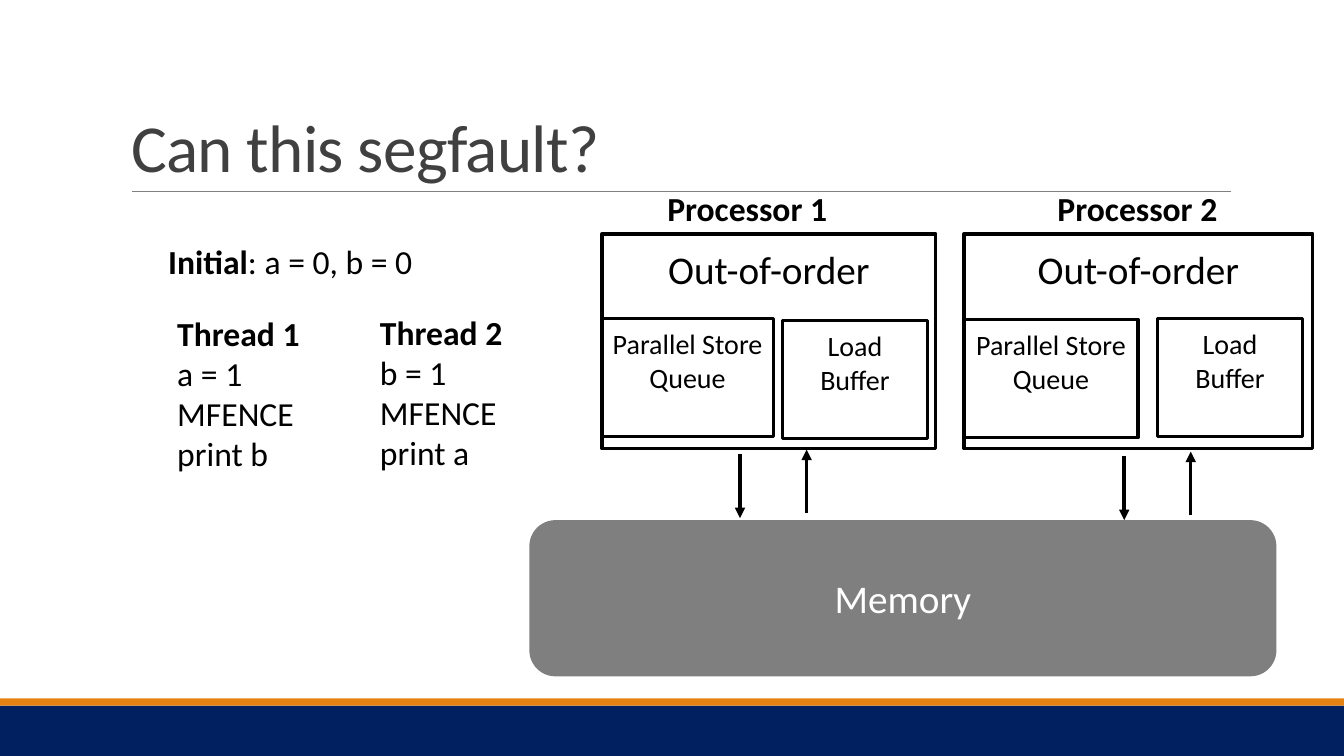
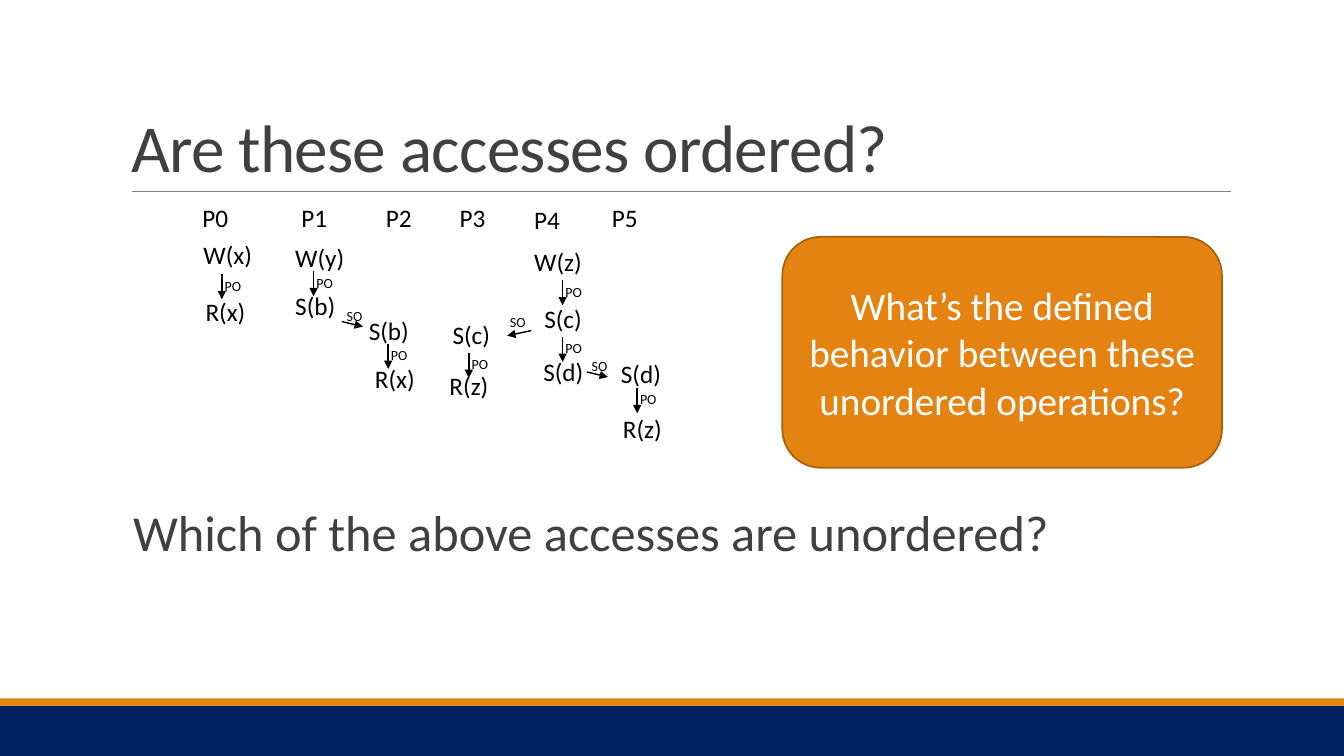
from dataclasses import dataclass

from lxml.etree import SubElement
from pptx import Presentation
from pptx.dml.color import RGBColor
from pptx.enum.shapes import MSO_CONNECTOR, MSO_SHAPE
from pptx.enum.text import MSO_ANCHOR, MSO_AUTO_SIZE, PP_ALIGN
from pptx.oxml.ns import qn
from pptx.util import Inches, Pt

FONT = "Calibri"
COLORS = {
    "navy": "002060",
    "orange": "E48312",
    "rust": "A9610D",
    "rule": "808080",
    "title": "404040",
    "black": "000000",
    "white": "FFFFFF",
}


@dataclass
class Processor:
    name: str
    name_left: float
    left: float
    width: float
    store_top: float
    store_width: float
    load_left: float
    load_top: float
    down_left: float
    up_left: float
    arrow_top: float


@dataclass
class Label:
    text: str
    left: float
    top: float


@dataclass
class SyncEdge:
    start: tuple[float, float]
    end: tuple[float, float]
    label: Label


PROCESSORS = [
    Processor("Processor 1", 6.52, 5.97, 3.31, 3.16, 1.7, 7.76, 3.18, 7.34, 8, 4.5),
    Processor("Processor 2", 10.39, 9.56, 3.46, 3.17, 1.73, 11.48, 3.16, 11.15, 11.81, 4.52),
]

ACCESSES = [
    Label("P0", 1.91, 1.96), Label("W(x)", 1.92, 2.33), Label("R(x)", 1.94, 2.89),
    Label("P1", 2.89, 1.96), Label("W(y)", 2.83, 2.35), Label("S(b)", 2.83, 2.83),
    Label("P2", 3.73, 1.96), Label("S(b)", 3.56, 3.08), Label("R(x)", 3.62, 3.56),
    Label("P3", 4.46, 1.96), Label("S(c)", 4.39, 3.12), Label("R(z)", 4.36, 3.62),
    Label("P4", 5.2, 1.98), Label("W(z)", 5.2, 2.39), Label("S(c)", 5.3, 2.96),
    Label("S(d)", 5.29, 3.49),
    Label("P5", 5.97, 1.96), Label("S(d)", 6.06, 3.51), Label("R(z)", 6.08, 4.05),
]

# Tops of the program-order arrows
PROGRAM_ORDER = [(2.2, 2.72), (3.11, 2.69), (3.85, 3.41), (4.65, 3.5),
                 (5.58, 2.78), (5.58, 3.34), (6.32, 3.85)]

SYNC_ORDER = [
    SyncEdge((3.39, 3.19), (3.6, 3.24), Label("SO", 3.34, 3)),
    SyncEdge((5.27, 3.28), (5.03, 3.33), Label("SO", 4.96, 3.06)),
    SyncEdge((5.82, 3.69), (6.03, 3.74), Label("SO", 5.77, 3.5)),
]


def rgb(color: str) -> RGBColor:
    return RGBColor.from_string(COLORS[color])


def set_font(font, size: float, color: str) -> None:
    font.name = FONT
    font.size = Pt(size)
    font.color.rgb = rgb(color)


def add_text(page, left: float, top: float, width: float, height: float,
             lines: list[str], size: float, color: str = "black",
             bold_first: bool = False):
    box = page.shapes.add_textbox(Inches(left), Inches(top), Inches(width), Inches(height))
    frame = box.text_frame
    frame.word_wrap = True
    frame.text = "\n".join(lines)
    for para in frame.paragraphs:
        set_font(para.font, size, color)
    if bold_first:
        frame.paragraphs[0].font.bold = True
    return box


def add_box(page, kind, left: float, top: float, width: float, height: float,
            fill: str, line: str | None = None, line_width: float = 2.5,
            text: str = "", size: float = 28, color: str = "black",
            top_inset: float | None = None):
    """Draw a filled shape; a top inset places its text at the top."""
    box = page.shapes.add_shape(kind, Inches(left), Inches(top), Inches(width), Inches(height))
    box.shadow.inherit = False
    box.fill.solid()
    box.fill.fore_color.rgb = rgb(fill)
    if line:
        box.line.color.rgb = rgb(line)
        box.line.width = Pt(line_width)
    else:
        box.line.fill.background()
    if text:
        frame = box.text_frame
        frame.word_wrap = True
        frame.vertical_anchor = MSO_ANCHOR.MIDDLE
        if top_inset is not None:
            frame.vertical_anchor = MSO_ANCHOR.TOP
            frame.margin_top = Inches(top_inset)
        frame.text = text
        para = frame.paragraphs[0]
        para.alignment = PP_ALIGN.CENTER
        set_font(para.font, size, color)
    return box


def add_line(page, start: tuple[float, float], end: tuple[float, float],
             width: float, color: str = "black", arrow: bool = True) -> None:
    line = page.shapes.add_connector(
        MSO_CONNECTOR.STRAIGHT, *(Inches(value) for value in (*start, *end)))
    line.line.color.rgb = rgb(color)
    line.line.width = Pt(width)
    if arrow:
        SubElement(line.line._get_or_add_ln(), qn("a:tailEnd"), type="triangle")
    SubElement(line._element.spPr, qn("a:effectLst"))


def add_page(deck, title: str):
    """Add a page with the shared bands, rule and title."""
    page = deck.slides.add_slide(deck.slide_layouts[5])
    add_box(page, MSO_SHAPE.RECTANGLE, 0, 7, 13.33, 0.5, "navy")
    add_box(page, MSO_SHAPE.RECTANGLE, 0, 6.93, 13.33, 0.07, "orange")
    add_line(page, (1.31, 1.9), (12.21, 1.9), 0.5, "rule", arrow=False)

    holder = page.shapes.title
    holder.left, holder.top = Inches(1.2), Inches(0.31)
    holder.width, holder.height = Inches(11), Inches(1.59)
    frame = holder.text_frame
    frame.text = title
    frame.word_wrap = True
    frame.auto_size = MSO_AUTO_SIZE.NONE
    frame.vertical_anchor = MSO_ANCHOR.BOTTOM
    para = frame.paragraphs[0]
    para.alignment = PP_ALIGN.LEFT
    para.line_spacing = 0.85
    set_font(para.font, 48, "title")
    para.runs[0].font._element.set("spc", "-50")
    return page


def draw_processor(page, processor: Processor) -> None:
    add_text(page, processor.name_left, 1.82, 2.36, 0.5, [processor.name], 24, bold_first=True)
    add_box(page, MSO_SHAPE.RECTANGLE, processor.left, 2.32, processor.width, 2.13,
            "white", "black", text="Out-of-order", top_inset=0.11)
    queues = [
        ("Parallel Store Queue", processor.left, processor.store_top, processor.store_width),
        ("Load Buffer", processor.load_left, processor.load_top, 1.44),
    ]
    for text, left, top, width in queues:
        add_box(page, MSO_SHAPE.RECTANGLE, left, top, width, 1.17,
                "white", "black", text=text, size=20, top_inset=0.08)
    # Traffic to and from memory
    top = processor.arrow_top
    add_line(page, (processor.down_left, top), (processor.down_left, top + 0.64), 2.5)
    add_line(page, (processor.up_left, top + 0.59), (processor.up_left, top - 0.04), 2.5)


def build_segfault_page(deck) -> None:
    page = add_page(deck, "Can this segfault?")

    # Memory, half transparent
    memory = add_box(page, MSO_SHAPE.ROUNDED_RECTANGLE, 5.25, 5.16, 7.41, 1.55,
                     "black", text="Memory", color="white")
    fill_color = memory._element.spPr.find(qn("a:solidFill"))[0]
    SubElement(fill_color, qn("a:alpha"), val="50000")

    for processor in PROCESSORS:
        draw_processor(page, processor)

    # Program
    add_text(page, 1.66, 3.05, 2.36, 1.72,
             ["Thread 1", "a = 1", "MFENCE", "print b"], 24, bold_first=True)
    add_text(page, 3.67, 3.04, 2.01, 1.72,
             ["Thread 2", "b = 1", "MFENCE", "print a"], 24, bold_first=True)
    initial = add_text(page, 1.57, 2.34, 4.8, 0.5, ["Initial"], 24)
    para = initial.text_frame.paragraphs[0]
    para.runs[0].font.bold = True
    para.add_run().text = ": a = 0, b = 0"


def build_ordering_page(deck) -> None:
    page = add_page(deck, "Are these accesses ordered?")

    # Question
    question = add_text(page, 1.32, 4.99, 10.88, 1.8,
                        ["Which of the above accesses are unordered?"], 36, "title")
    question.text_frame.margin_left = question.text_frame.margin_right = 0
    question.text_frame.paragraphs[0].line_spacing = 0.9

    # Accesses and the edges between them
    for access in ACCESSES:
        add_text(page, access.left, access.top, 0.73, 0.4, [access.text], 18)
    program_edges = [
        SyncEdge((left, top), (left, top + 0.25), Label("PO", left - 0.07, top - 0.02))
        for left, top in PROGRAM_ORDER
    ]
    for edge in program_edges + SYNC_ORDER:
        add_line(page, edge.start, edge.end, 1)
        add_text(page, edge.label.left, edge.label.top, 0.44, 0.27, [edge.label.text], 10)

    # Callout
    add_box(page, MSO_SHAPE.ROUNDED_RECTANGLE, 7.76, 2.35, 4.36, 2.29, "orange", "rust", 1.25,
            "What’s the defined behavior between these unordered operations?", color="white")


def main() -> None:
    deck = Presentation()
    deck.slide_width, deck.slide_height = Inches(13.33), Inches(7.5)
    build_segfault_page(deck)
    build_ordering_page(deck)
    deck.save("out.pptx")


if __name__ == "__main__":
    main()
